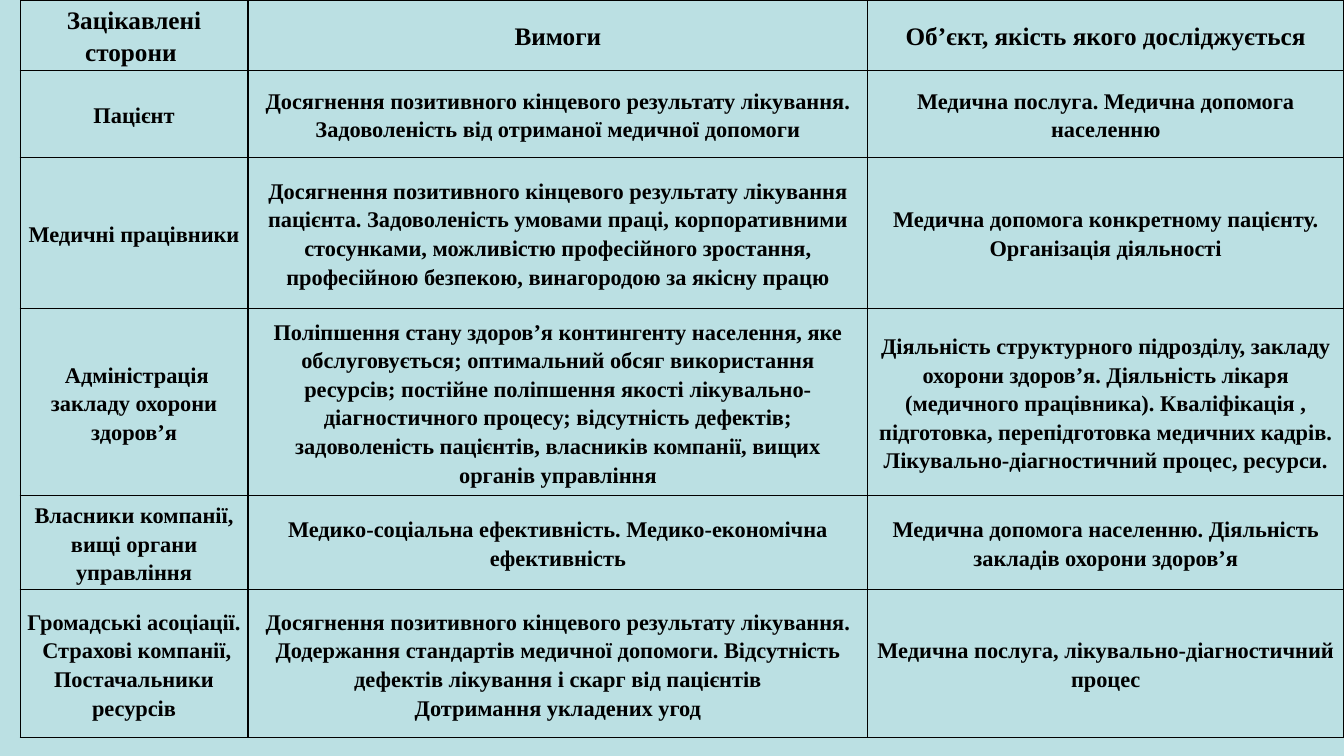
from lxml import etree
from pptx import Presentation
from pptx.dml.color import RGBColor
from pptx.enum.text import MSO_ANCHOR, PP_ALIGN
from pptx.oxml.ns import qn
from pptx.util import Pt

CENTER = PP_ALIGN.CENTER
MIDDLE = MSO_ANCHOR.MIDDLE
FONT = "Times New Roman"
COLORS = {"background": "BBE0E3", "text": "000000", "border": "000000"}

COLUMN_WIDTHS = [162.72, 442.8, 339.84]
ROW_HEIGHTS = [50.4, 61.92, 108, 133.92, 66.96, 105.84]

# Each line break inside a cell starts a new paragraph
STAKEHOLDERS = [
    ("Зацікавлені сторони ", "Вимоги", "Об’єкт, якість якого досліджується"),
    ("Пацієнт",
     "Досягнення позитивного кінцевого результату лікування. "
     "Задоволеність від отриманої медичної допомоги",
     "Медична послуга. Медична допомога населенню"),
    ("Медичні працівники",
     "Досягнення позитивного кінцевого результату лікування пацієнта. "
     "Задоволеність умовами праці, корпоративними стосунками, можливістю "
     "професійного зростання, професійною безпекою, винагородою за якісну працю",
     "Медична допомога конкретному пацієнту. Організація діяльності"),
    (" Адміністрація закладу охорони здоров’я",
     "Поліпшення стану здоров’я контингенту населення, яке обслуговується; "
     "оптимальний обсяг використання ресурсів; постійне поліпшення якості "
     "лікувально-діагностичного процесу; відсутність дефектів; "
     "задоволеність пацієнтів, власників компанії, вищих органів управління",
     "Діяльність структурного підрозділу, закладу охорони здоров’я. "
     "Діяльність лікаря (медичного працівника). Кваліфікація , підготовка, "
     "перепідготовка медичних кадрів. Лікувально-діагностичний процес, ресурси."),
    ("Власники компанії, вищі органи управління",
     "Медико-соціальна ефективність. Медико-економічна ефективність",
     "Медична допомога населенню. Діяльність закладів охорони здоров’я"),
    ("Громадські асоціації.\n Страхові компанії, Постачальники ресурсів",
     "Досягнення позитивного кінцевого результату лікування. Додержання "
     "стандартів медичної допомоги. Відсутність дефектів лікування і скарг "
     "від пацієнтів\nДотримання укладених угод",
     "Медична послуга, лікувально-діагностичний процес"),
]


def rgb(name):
    return RGBColor.from_string(COLORS[name])


def write_text(frame, text, size=16, bold=True, color="text", spacing=1.15):
    for index, line in enumerate(text.split("\n")):
        paragraph = frame.add_paragraph() if index else frame.paragraphs[0]
        paragraph.alignment = CENTER
        paragraph.line_spacing = spacing
        run = paragraph.add_run()
        run.text = line
        run.font.name = FONT
        run.font.size = Pt(size)
        run.font.bold = bold
        run.font.color.rgb = rgb(color)


def add_borders(cell, width=1):
    properties = cell._tc.get_or_add_tcPr()
    for position, side in enumerate(("a:lnL", "a:lnR", "a:lnT", "a:lnB")):
        line = etree.Element(qn(side), w=str(Pt(width)))
        fill = etree.SubElement(line, qn("a:solidFill"))
        etree.SubElement(fill, qn("a:srgbClr"), val=COLORS["border"])
        properties.insert(position, line)


def add_stakeholder_table(slide, left, top, widths, heights):
    table = slide.shapes.add_table(
        len(heights), len(widths), Pt(left), Pt(top),
        Pt(sum(widths)), Pt(sum(heights))).table
    table.horz_banding = False
    for column, width in zip(table.columns, widths):
        column.width = Pt(width)
    for row, height, texts in zip(table.rows, heights, STAKEHOLDERS):
        row.height = Pt(height)
        size = 18 if texts is STAKEHOLDERS[0] else 16
        for cell, text in zip(row.cells, texts):
            cell.fill.background()
            cell.vertical_anchor = MIDDLE
            cell.margin_left = cell.margin_right = Pt(5)
            cell.margin_top = cell.margin_bottom = Pt(0)
            add_borders(cell)
            write_text(cell.text_frame, text, size=size)


def main():
    presentation = Presentation()
    presentation.slide_width = Pt(960)
    presentation.slide_height = Pt(540)
    slide = presentation.slides.add_slide(presentation.slide_layouts[6])
    background = slide.background.fill
    background.solid()
    background.fore_color.rgb = rgb("background")
    add_stakeholder_table(slide, 14.4, 0, COLUMN_WIDTHS, ROW_HEIGHTS)
    presentation.save("out.pptx")


if __name__ == "__main__":
    main()
